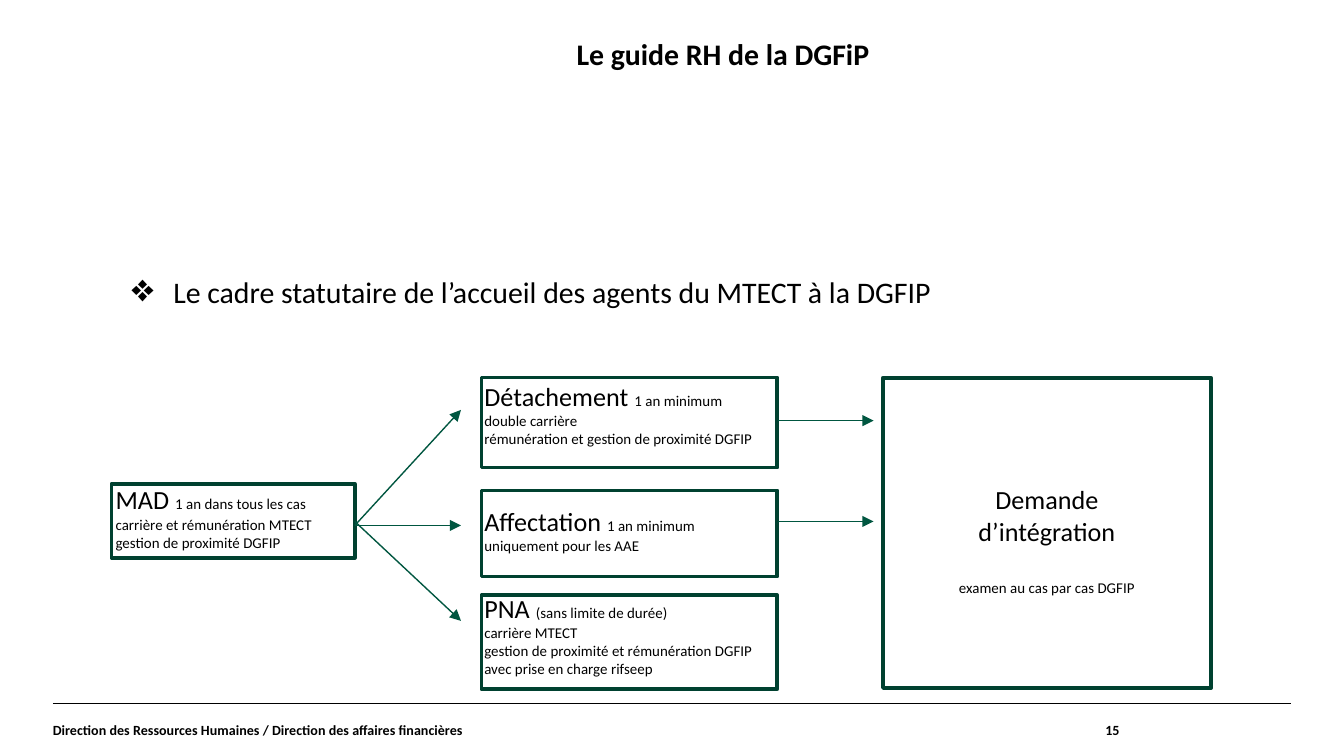
from lxml import etree
from pptx import Presentation, util as u
from pptx.dml.color import RGBColor
from pptx.enum import shapes, text
from pptx.oxml.ns import qn

# The slide is a grid of square cells, a tenth of an inch wide.
COLUMNS, ROWS = 100, 56.25
FONT = "Calibri"
COLOURS = {"text": "000000", "border": "004130", "arrow": "005640"}
LEFT, CENTRE, RIGHT = (text.PP_ALIGN.LEFT, text.PP_ALIGN.CENTER,
                       text.PP_ALIGN.RIGHT)
TOP, MIDDLE = text.MSO_ANCHOR.TOP, text.MSO_ANCHOR.MIDDLE

MARGIN, FOOTER_ROW = 3.93, 52.33
STATUS_COLUMN, STATUS_WIDTH = 35.84, 22

# Top row, height, text inset, heading, condition, further lines
STATUSES = [
    (28.1, 6.7, 0.2, "Détachement ", "1 an minimum",
     ["double carrière", "rémunération et gestion de proximité DGFIP"]),
    (36.5, 6.4, 1.1, "Affectation ", "1 an minimum",
     ["uniquement pour les AAE"]),
    (44.3, 7, -0.2, "PNA ", "(sans limite de durée)",
     ["carrière MTECT",
      "gestion de proximité et rémunération DGFIP avec prise en charge rifseep"]),
]
# Start row and end row of each arrow
ARROWS_FROM_MAD = [(39.1, 30.5), (39.1, 39.1), (38.8, 46.2)]
ARROW_ROWS_TO_INTEGRATION = [31.3, 38.8]


def cells(count):
    return u.Inches(count / 10)


def colour(name):
    return RGBColor.from_string(COLOURS[name])


def set_frame(frame, anchor, insets=(0, 0, 0, 0)):
    frame.word_wrap = True
    frame.vertical_anchor = anchor
    (frame.margin_left, frame.margin_top,
     frame.margin_right, frame.margin_bottom) = map(cells, insets)


def add_run(paragraph, words, size, bold=False):
    run = paragraph.add_run()
    run.text = words
    run.font.name = FONT
    run.font.size = u.Pt(size)
    run.font.bold = bold
    run.font.color.rgb = colour("text")


def add_label(slide, place, words, size, bold=True, align=LEFT, anchor=TOP):
    label = slide.shapes.add_textbox(*map(cells, place))
    set_frame(label.text_frame, anchor)
    paragraph = label.text_frame.paragraphs[0]
    paragraph.alignment = align
    add_run(paragraph, words, size, bold)
    return paragraph


def add_bullet(paragraph, symbol, indent, hanging, percent):
    properties = paragraph._p.get_or_add_pPr()
    properties.set("marL", str(cells(indent)))
    properties.set("indent", str(-cells(hanging)))
    etree.SubElement(properties, qn("a:buSzPct"), val=str(percent * 1000))
    etree.SubElement(properties, qn("a:buChar"), char=symbol)


def add_box(slide, place, insets):
    box = slide.shapes.add_shape(shapes.MSO_SHAPE.RECTANGLE, *map(cells, place))
    box.shadow.inherit = False
    box.fill.background()
    box.line.color.rgb = colour("border")
    box.line.width = u.Pt(2)
    set_frame(box.text_frame, TOP, insets)
    return box.text_frame


def add_status(slide, place, insets, heading, condition, details):
    """Box with a large heading, its condition beside it and details below."""
    paragraph = add_box(slide, place, insets).paragraphs[0]
    paragraph.alignment = LEFT
    add_run(paragraph, heading, 14)
    add_run(paragraph, condition, 8)
    for detail in details:
        paragraph.add_line_break()
        add_run(paragraph, detail, 8)


def add_integration(slide, place):
    frame = add_box(slide, place, (1, 7.9, 1, 0))
    lines = [("Demande", 14, 0), ("d’intégration", 14, 0),
             ("examen au cas par cas DGFIP", 8, 17)]
    for index, (words, size, gap) in enumerate(lines):
        paragraph = frame.add_paragraph() if index else frame.paragraphs[0]
        paragraph.alignment = CENTRE
        paragraph.space_before = u.Pt(gap)
        add_run(paragraph, words, size)


def add_line(slide, start, end, colour_name, width, head=False):
    line = slide.shapes.add_connector(
        shapes.MSO_CONNECTOR.STRAIGHT, *map(cells, start + end))
    line.line.color.rgb = colour(colour_name)
    line.line.width = u.Pt(width)
    if head:
        etree.SubElement(line.line._get_or_add_ln(), qn("a:tailEnd"),
                         type="triangle")
    etree.SubElement(line._element.spPr, qn("a:effectLst"))


def add_footer(slide):
    add_line(slide, (MARGIN, FOOTER_ROW), (COLUMNS - MARGIN, FOOTER_ROW),
             "text", 0.8)
    height = ROWS - FOOTER_ROW
    add_label(slide, (MARGIN, FOOTER_ROW, 64.6, height),
              "Direction des Ressources Humaines / Direction des affaires financières",
              7.5, anchor=MIDDLE)
    add_label(slide, (68.5, FOOTER_ROW, 14.8, height), "15", 7.5,
              align=RIGHT, anchor=MIDDLE)


def add_diagram(slide):
    add_status(slide, (8.3, 36, 18.1, 5.5), (0.3, 0, 0, 0), "MAD ",
               "1 an dans tous les cas",
               ["carrière et rémunération MTECT", "gestion de proximité DGFIP"])
    for top, height, inset, *words in STATUSES:
        add_status(slide, (STATUS_COLUMN, top, STATUS_WIDTH, height),
                   (0.2, inset, 1, 0), *words)
    add_integration(slide, (65.7, 28.1, 24.4, 23.1))
    for start_row, end_row in ARROWS_FROM_MAD:
        add_line(slide, (26.4, start_row), (34.3, end_row), "arrow", 0.75, True)
    for row in ARROW_ROWS_TO_INTEGRATION:
        add_line(slide, (57.9, row), (65, row), "arrow", 0.75, True)


def main():
    deck = Presentation()
    deck.slide_width, deck.slide_height = cells(COLUMNS), cells(ROWS)
    slide = deck.slides.add_slide(deck.slide_layouts[6])
    title = add_label(slide, (19.3, 2.93, 69, 4.2), "Le guide RH de la DGFiP",
                      16, align=CENTRE)
    title.line_spacing = 0.9
    topic = add_label(
        slide, (5.1, 20.4, 92.1, 3),
        "Le cadre statutaire de l’accueil des agents du MTECT à la DGFIP",
        16, bold=False)
    add_bullet(topic, "❖", indent=7.8, hanging=3.1, percent=130)
    add_diagram(slide)
    add_footer(slide)
    deck.save("out.pptx")


if __name__ == "__main__":
    main()
